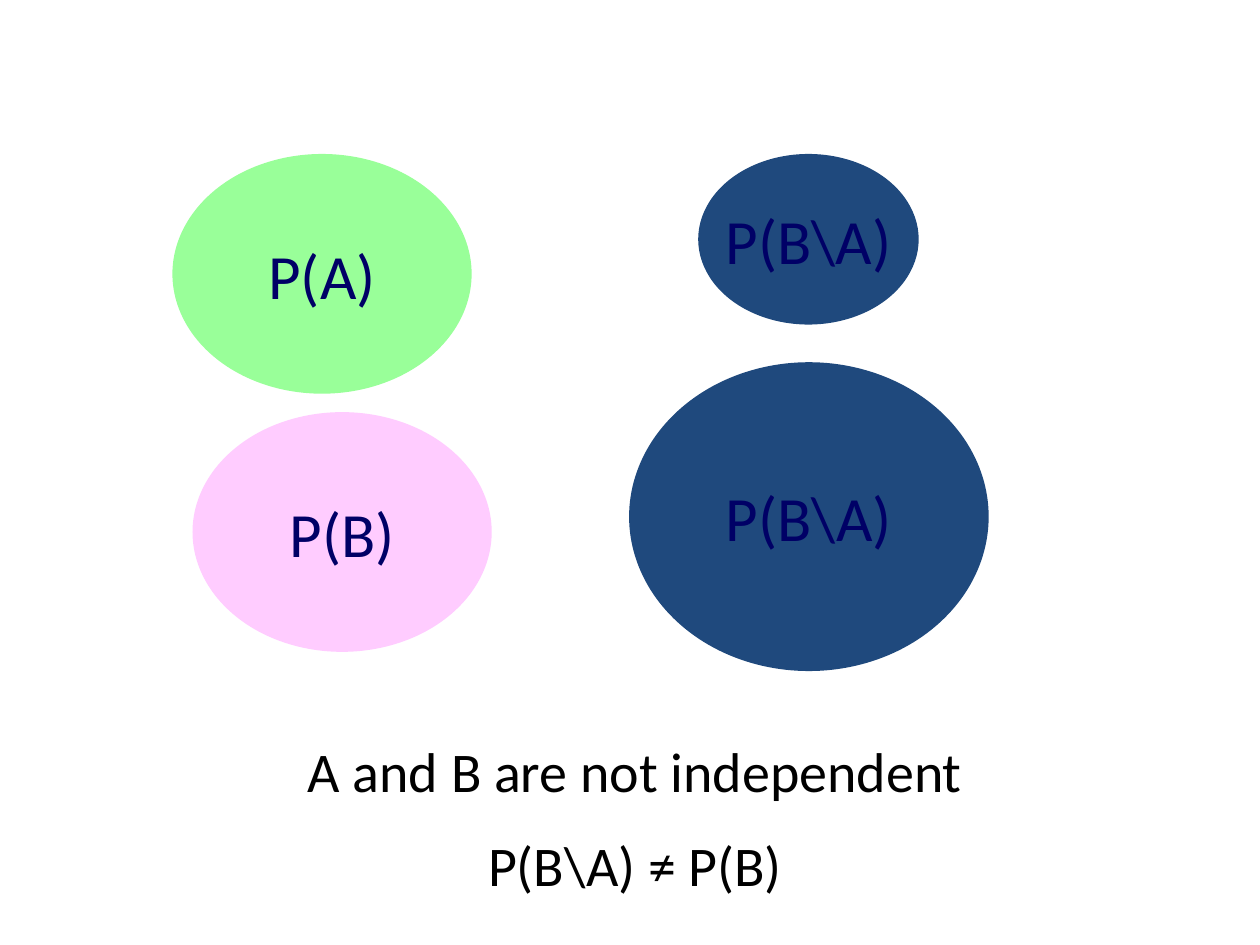
from pptx import Presentation
from pptx.dml.color import RGBColor
from pptx.enum.shapes import MSO_SHAPE
from pptx.enum.text import MSO_ANCHOR, PP_ALIGN
from pptx.util import Pt

GREEN = RGBColor(0x99, 0xFF, 0x99)
PINK = RGBColor(0xFF, 0xCC, 0xFF)
BLUE = RGBColor(0x1F, 0x49, 0x7D)
NAVY = RGBColor(0x00, 0x00, 0x66)
BLACK = RGBColor(0, 0, 0)
FONT = "Calibri"


def add_line(para, text, size, color):
    para.alignment = PP_ALIGN.CENTER
    run = para.add_run()
    run.text = text
    run.font.name = FONT
    run.font.size = Pt(size)
    run.font.color.rgb = color


def add_event(slide, box, text, color):
    """Draw one event as a filled ellipse with its probability inside."""
    oval = slide.shapes.add_shape(MSO_SHAPE.OVAL, *map(Pt, box))
    oval.shadow.inherit = False
    oval.fill.solid()
    oval.fill.fore_color.rgb = color
    oval.line.color.rgb = color
    oval.line.width = Pt(1)
    frame = oval.text_frame
    frame.word_wrap = False
    frame.vertical_anchor = MSO_ANCHOR.MIDDLE
    add_line(frame.paragraphs[0], text, 36, NAVY)


def add_claim(slide, box, lines):
    """Write the centred conclusion, one paragraph a line."""
    frame = slide.shapes.add_textbox(*map(Pt, box)).text_frame
    frame.word_wrap = True
    for i, text in enumerate(lines):
        para = frame.add_paragraph() if i else frame.paragraphs[0]
        para.space_before = Pt(15 if i else 0)
        add_line(para, text, 32, BLACK)


def main():
    deck = Presentation()
    deck.slide_width, deck.slide_height = Pt(720), Pt(540)
    slide = deck.slides.add_slide(deck.slide_layouts[6])
    add_event(slide, (99, 88.5, 170, 136), "P(A)", GREEN)
    add_event(slide, (110.5, 236, 170, 136), "P(B)", PINK)
    add_event(slide, (399.5, 88.5, 125, 96.5), "P(B\\A)", BLUE)
    add_claim(slide, (99.5, 417.5, 527, 103),
              ("A and B are not independent", "P(B\\A) ≠ P(B)"))
    add_event(slide, (360, 207.5, 204.5, 175.5), "P(B\\A)", BLUE)
    deck.save("out.pptx")


if __name__ == "__main__":
    main()
